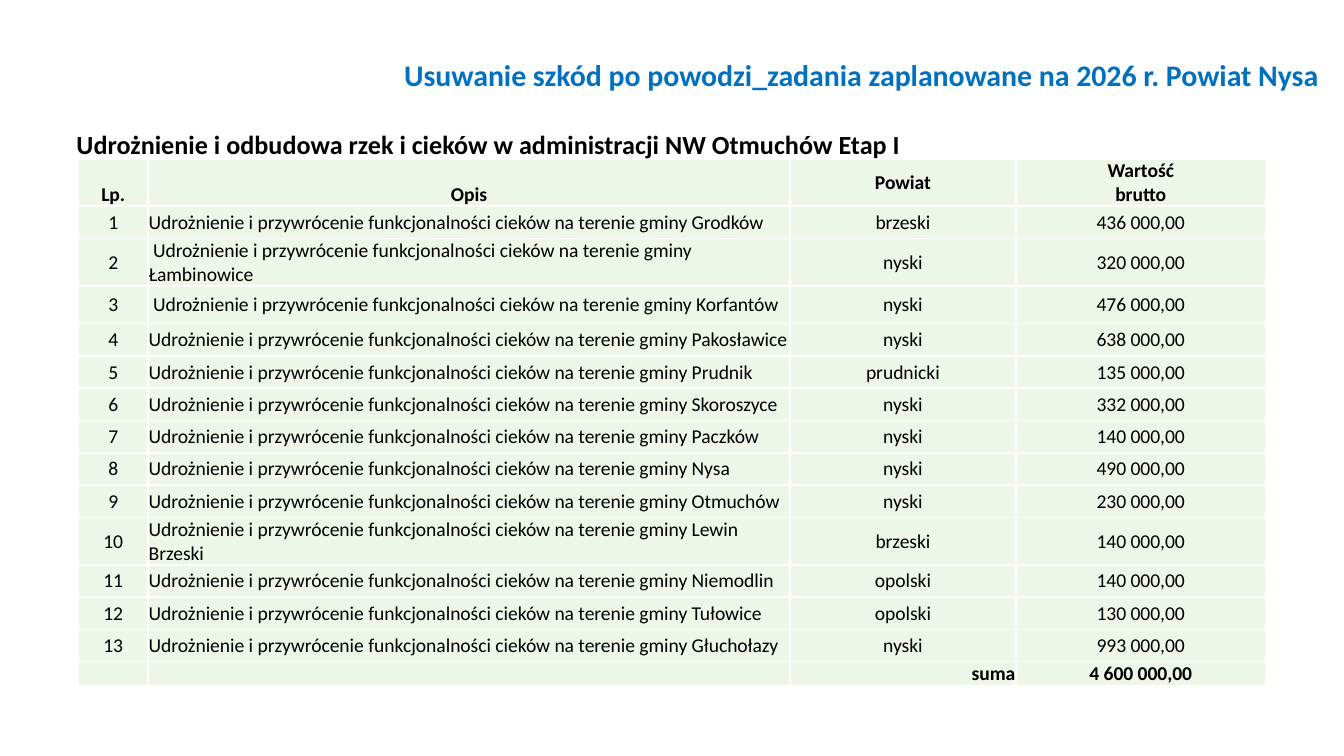
import dataclasses

import lxml.etree
import pptx
import pptx.dml.color
import pptx.enum.text
import pptx.oxml.ns
import pptx.util

Cm = pptx.util.Cm
Pt = pptx.util.Pt
ALIGN = pptx.enum.text.PP_ALIGN
ANCHOR = pptx.enum.text.MSO_ANCHOR
qn = pptx.oxml.ns.qn


@dataclasses.dataclass(frozen=True)
class Theme:
    font: str = "Calibri"
    blue: str = "0070C0"
    ink: str = "000000"
    mint: str = "ECF7E8"
    rule: str = "FFFFFF"
    head: float = 16
    sub: float = 14
    cell: float = 10.5
    line: float = 1


THEME = Theme()
TASK = "Udrożnienie i przywrócenie funkcjonalności cieków na terenie gminy "
HEADS = ["Lp.", "Opis", "Powiat", "Wartość\nbrutto"]
TASKS = [
    ("", "Grodków", "brzeski", "436 000,00"),
    (" ", "Łambinowice", "nyski", "320 000,00"),
    (" ", "Korfantów", "nyski", "476 000,00"),
    ("", "Pakosławice", "nyski", "638 000,00"),
    ("", "Prudnik", "prudnicki", "135 000,00"),
    ("", "Skoroszyce", "nyski", "332 000,00"),
    ("", "Paczków", "nyski", "140 000,00"),
    ("", "Nysa", "nyski", "490 000,00"),
    ("", "Otmuchów", "nyski", "230 000,00"),
    ("", "Lewin Brzeski", "brzeski", "140 000,00"),
    ("", "Niemodlin", "opolski", "140 000,00"),
    ("", "Tułowice", "opolski", "130 000,00"),
    ("", "Głuchołazy", "nyski", "993 000,00"),
]
TOTAL = ["", "", "suma", "4 600 000,00"]
WIDTHS = [1.32, 12.13, 4.27, 4.72]


def write(para, text, size, color, bold, align):
    para.alignment = align
    for i, part in enumerate(text.split("\n")):
        if i:
            para.add_line_break()
        run = para.add_run()
        run.text = part
        run.font.name = THEME.font
        run.font.size = Pt(size)
        run.font.bold = bold
        run.font.color.rgb = pptx.dml.color.RGBColor.from_string(color)


def add_label(slide, box, text, size, color, align):
    frame = slide.shapes.add_textbox(*map(Cm, box)).text_frame
    frame.word_wrap = True
    write(frame.paragraphs[0], text, size, color, True, align)


def style_cell(cell, anchor):
    cell.margin_left = cell.margin_right = cell.margin_top = Cm(0.01)
    cell.margin_bottom = 0
    cell.vertical_anchor = anchor
    props = cell._tc.get_or_add_tcPr()
    for side in ("a:lnL", "a:lnR", "a:lnT", "a:lnB"):
        edge = lxml.etree.SubElement(props, qn(side), w=str(Pt(THEME.line)))
        fill = lxml.etree.SubElement(edge, qn("a:solidFill"))
        lxml.etree.SubElement(fill, qn("a:srgbClr"), val=THEME.rule)
    cell.fill.solid()
    cell.fill.fore_color.rgb = pptx.dml.color.RGBColor.from_string(THEME.mint)


def add_costs(slide, box):
    rows = [HEADS]
    for i, (lead, place, county, cost) in enumerate(TASKS, 1):
        rows.append([str(i), lead + TASK + place, county, cost])
    rows.append(TOTAL)
    last = len(rows) - 1
    table = slide.shapes.add_table(len(rows), len(WIDTHS), *map(Cm, box)).table
    table.first_row = table.horz_banding = False
    for col, width in zip(table.columns, WIDTHS):
        col.width = Cm(width)
    tall = {3: 0.71, last: 0.3}
    for r, row in enumerate(rows):
        table.rows[r].height = Cm(tall.get(r, 0.61))
        edge = r in (0, last)
        for c, text in enumerate(row):
            cell = table.cell(r, c)
            low = edge and (r, c) != (0, 2)
            style_cell(cell, ANCHOR.BOTTOM if low else ANCHOR.MIDDLE)
            para = cell.text_frame.paragraphs[0]
            if not text:
                size = str(int(THEME.cell * 100))
                lxml.etree.SubElement(para._p, qn("a:endParaRPr"), sz=size)
                continue
            align = ALIGN.CENTER
            if c == 1 and not edge:
                align = ALIGN.LEFT
            elif c == 2 and r == last:
                align = ALIGN.RIGHT
            write(para, text, THEME.cell, THEME.ink, edge, align)


def main():
    deck = pptx.Presentation()
    deck.slide_width = Cm(25.4)
    deck.slide_height = Cm(14.29)
    slide = deck.slides.add_slide(deck.slide_layouts[6])
    add_label(
        slide, (7.39, 0.94, 18.77, 2.01),
        "Usuwanie szkód po powodzi_zadania zaplanowane na 2026 r. Powiat Nysa",
        THEME.head, THEME.blue, ALIGN.LEFT,
    )
    add_costs(slide, (1.48, 3, sum(WIDTHS), 8.94))
    add_label(
        slide, (0, 2.31, 18.47, 0.86),
        "Udrożnienie i odbudowa rzek i cieków w administracji NW Otmuchów Etap I",
        THEME.sub, THEME.ink, ALIGN.CENTER,
    )
    deck.save("out.pptx")


if __name__ == "__main__":
    main()
